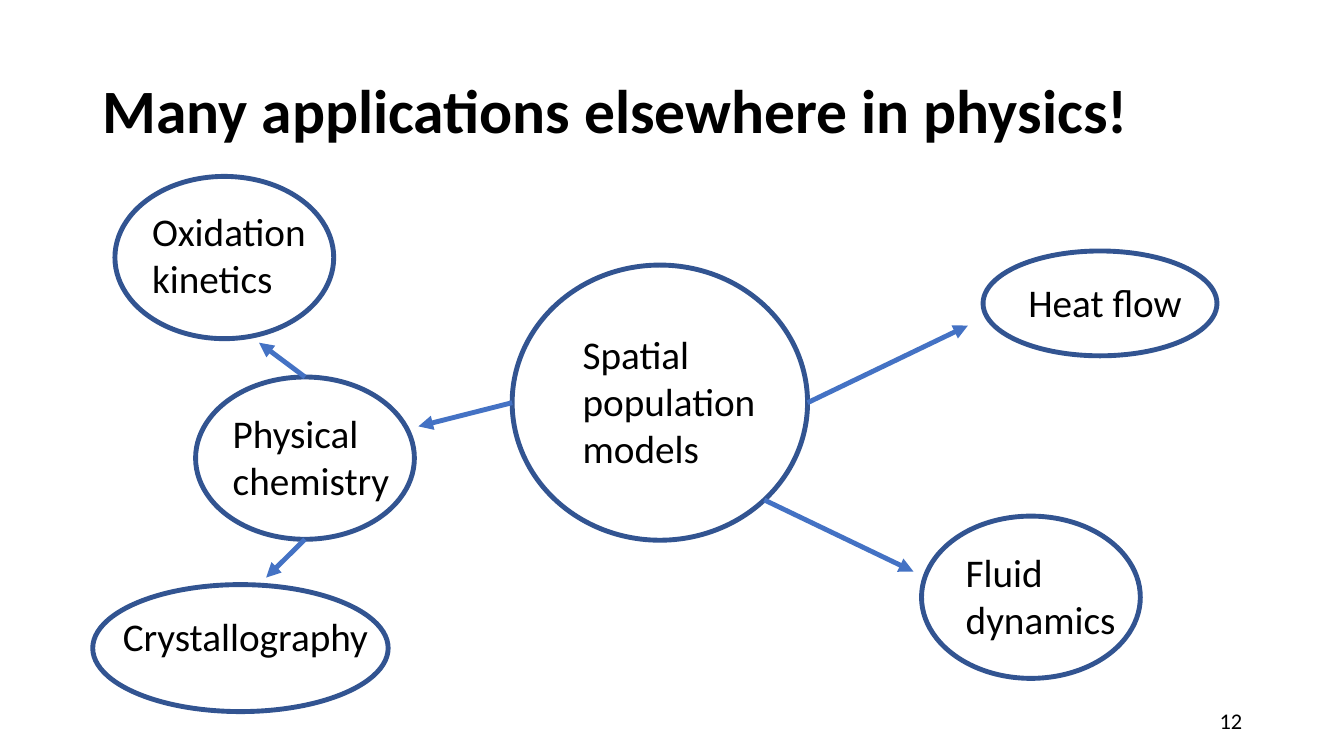
from math import cos, radians, sin

from lxml import etree
from pptx import Presentation
from pptx.dml.color import RGBColor
from pptx.enum.shapes import MSO_CONNECTOR, MSO_SHAPE
from pptx.enum.text import MSO_ANCHOR, PP_ALIGN
from pptx.oxml.ns import qn
from pptx.util import Inches, Pt

ELLIPSE = MSO_SHAPE.OVAL
STRAIGHT = MSO_CONNECTOR.STRAIGHT
TOP, MIDDLE = MSO_ANCHOR.TOP, MSO_ANCHOR.MIDDLE
LEFT, RIGHT = PP_ALIGN.LEFT, PP_ALIGN.RIGHT

BLACK = RGBColor(0x00, 0x00, 0x00)
OUTLINE = RGBColor(0x32, 0x54, 0x91)
ARROW = RGBColor(0x44, 0x72, 0xC4)
FONT = "Calibri"
LINE_WIDTH = Pt(3.5)

# Content: boxes are (left, top, width, height) in inches
TITLE = "Many applications elsewhere in physics!"
TITLE_BOX = (0.92, 0.4, 11.5, 1.45)
PAGE_NUMBER = "12"
NUMBER_BOX = (9.42, 6.95, 3, 0.4)

# Topic: (label box, ellipse box)
TOPICS = {
    "Spatial population models": ((5.68, 3.23, 1.99, 1.51), (5.08, 2.63, 2.93, 2.73)),
    "Heat flow": ((10.1, 2.71, 2.32, 0.57), (9.75, 2.49, 2.32, 1.04)),
    "Fluid dynamics": ((9.48, 5.39, 1.9, 1.04), (9.14, 5.12, 2.17, 1.61)),
    "Physical chemistry": ((2.21, 4.01, 1.92, 1.04), (1.94, 3.74, 2.17, 1.61)),
    "Oxidation kinetics": ((1.41, 2.01, 1.92, 1.04), (1.14, 1.75, 2.17, 1.61)),
    "Crystallography": ((1.12, 6.03, 2.85, 0.57), (0.92, 5.8, 2.93, 1.26)),
}

# Arrows: (topic, angle on its ellipse clockwise from the right, tip)
ARROWS = [
    ("Spatial population models", 45, (9.06, 5.67)),
    ("Spatial population models", 0, (9.6, 3.23)),
    ("Spatial population models", 180, (4.15, 4.23)),
    ("Physical chemistry", 90, (2.64, 5.73)),
    ("Physical chemistry", 270, (2.57, 3.4)),
]


def inches(values):
    return [Inches(value) for value in values]


def add_text(page, text, box, size, bold=False, anchor=TOP, align=LEFT, spacing=1.0):
    frame = page.shapes.add_textbox(*inches(box)).text_frame
    frame.word_wrap = True
    frame.vertical_anchor = anchor
    para = frame.paragraphs[0]
    para.alignment = align
    para.line_spacing = spacing
    span = para.add_run()
    span.text = text
    span.font.name = FONT
    span.font.size = Pt(size)
    span.font.bold = bold
    span.font.color.rgb = BLACK


def add_ellipse(page, box):
    ellipse = page.shapes.add_shape(ELLIPSE, *inches(box))
    ellipse.shadow.inherit = False
    ellipse.fill.background()
    ellipse.line.color.rgb = OUTLINE
    ellipse.line.width = LINE_WIDTH


def rim_point(box, angle):
    left, top, width, height = box
    turn = radians(angle)
    return left + width / 2 * (1 + cos(turn)), top + height / 2 * (1 + sin(turn))


def add_arrow(page, start, tip):
    arrow = page.shapes.add_connector(STRAIGHT, *inches(start + tip))
    arrow.line.color.rgb = ARROW
    arrow.line.width = LINE_WIDTH
    properties = arrow._element.spPr
    etree.SubElement(properties.find(qn("a:ln")), qn("a:tailEnd"), type="triangle")
    etree.SubElement(properties, qn("a:effectLst"))


def main():
    deck = Presentation()
    deck.slide_width, deck.slide_height = Inches(13.33), Inches(7.5)
    page = deck.slides.add_slide(deck.slide_layouts[6])

    # Title and topic labels
    add_text(page, TITLE, TITLE_BOX, 44, bold=True, anchor=MIDDLE, spacing=0.9)
    for topic, (label_box, _) in TOPICS.items():
        add_text(page, topic, label_box, 28)

    # Ellipses around the labels
    for _, ellipse_box in TOPICS.values():
        add_ellipse(page, ellipse_box)

    # Arrows from each ellipse rim to the related topic
    for topic, angle, tip in ARROWS:
        add_arrow(page, rim_point(TOPICS[topic][1], angle), tip)

    # Page number
    add_text(page, PAGE_NUMBER, NUMBER_BOX, 16, anchor=MIDDLE, align=RIGHT)

    deck.save("out.pptx")


if __name__ == "__main__":
    main()
